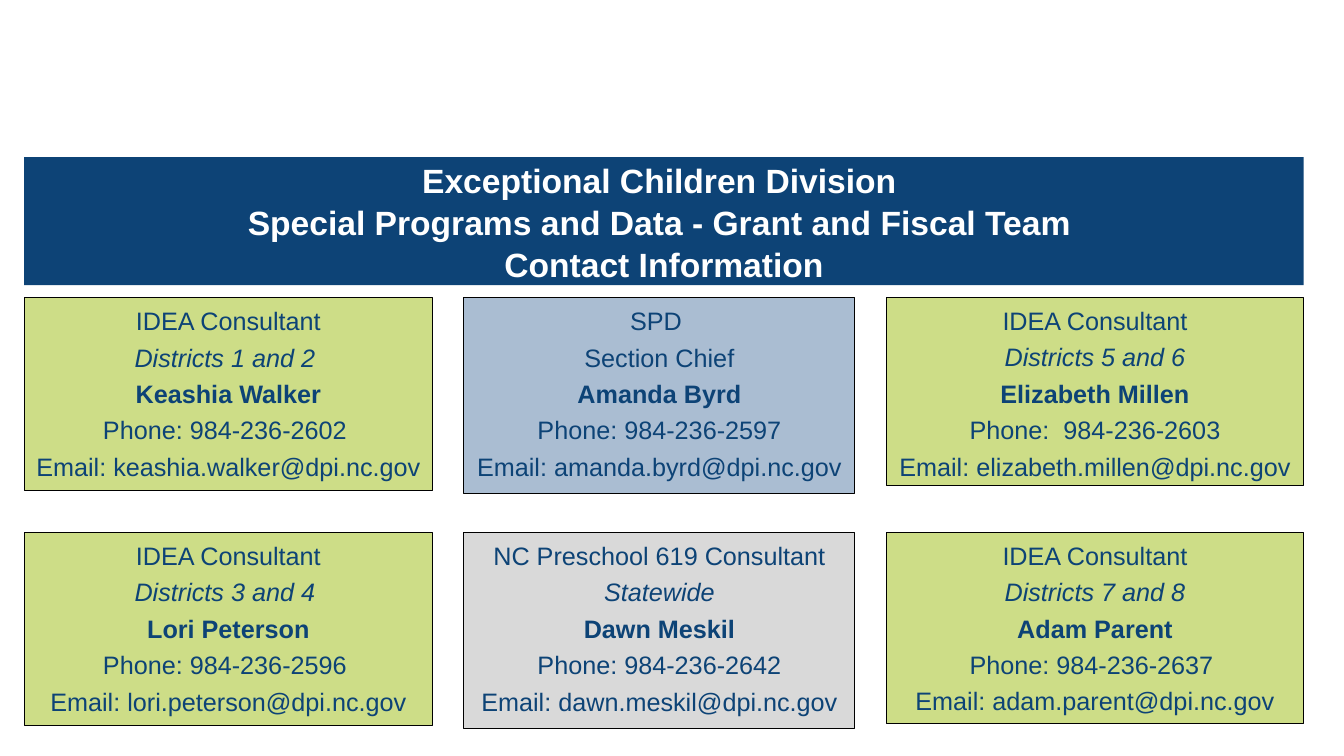
import pptx
import pptx.util
import pptx.dml.color
import pptx.enum.shapes
import pptx.enum.text
from dataclasses import dataclass

Inches, Pt = pptx.util.Inches, pptx.util.Pt
Anchor = pptx.enum.text.MSO_ANCHOR


@dataclass(frozen=True)
class Theme:
    font: str = "Arial"
    navy: str = "0D4376"
    white: str = "FFFFFF"
    black: str = "000000"
    green: str = "CDDD87"
    blue: str = "AABDD2"
    gray: str = "D9D9D9"
    head: int = 24
    body: int = 18
    gap: float = 4.4
    edge: float = 0.75


# Grid in inches: (left, width) of each column, top of each row
COLS = [(0.24, 4.05), (4.6, 3.88), (8.79, 4.14)]
ROWS = [2.95, 5.28]
BAND = (0.24, 1.56, 12.69, 1.27)


def color(code):
    return pptx.dml.color.RGBColor.from_string(code)


def write(para, text, *, face, size, ink, bold=False, italic=False,
          before=0, pitch=None):
    """Fill one centred paragraph; a vertical tab breaks the line."""
    para.text = text
    para.alignment = pptx.enum.text.PP_ALIGN.CENTER
    para.space_before = Pt(before)
    if pitch:
        para.line_spacing = pitch
    for run in para.runs:
        font = run.font
        font.name, font.size = face, Pt(size)
        font.bold, font.italic = bold, italic
        font.color.rgb = color(ink)


class Board:
    def __init__(self, slide, theme):
        self.slide, self.theme = slide, theme

    def box(self, area, fill, line=None, anchor=Anchor.TOP, inset=0.08):
        """Draw a rectangle and return its text frame."""
        shape = self.slide.shapes.add_shape(
            pptx.enum.shapes.MSO_SHAPE.RECTANGLE, *map(Inches, area))
        shape.shadow.inherit = False
        shape.fill.solid()
        shape.fill.fore_color.rgb = color(fill)
        if line:
            shape.line.color.rgb = color(line)
            shape.line.width = Pt(self.theme.edge)
        else:
            shape.line.fill.background()
        frame = shape.text_frame
        frame.word_wrap = True
        frame.vertical_anchor = anchor
        frame.margin_top = Inches(inset)
        return frame

    def title(self, text):
        look = self.theme
        frame = self.box(BAND, look.navy, anchor=Anchor.MIDDLE, inset=0.05)
        write(frame.paragraphs[0], text, face=look.font, size=look.head,
              ink=look.white, bold=True, pitch=1.05)

    def card(self, col, row, height, fill, role, area, name, phone, mail,
             slant=True):
        look = self.theme
        left, width = COLS[col]
        frame = self.box((left, ROWS[row], width, height), fill, look.black)
        lines = [role, area, name, f"Phone: {phone}",
                 f"Email: {mail}@dpi.nc.gov"]
        for i, text in enumerate(lines):
            para = frame.add_paragraph() if i else frame.paragraphs[0]
            write(para, text, face=look.font, size=look.body, ink=look.navy,
                  bold=i == 2, italic=slant and i == 1,
                  before=look.gap if i else 0)


def main():
    deck = pptx.Presentation()
    deck.slide_width, deck.slide_height = Inches(13.33), Inches(7.5)
    look = Theme()
    board = Board(deck.slides.add_slide(deck.slide_layouts[6]), look)

    board.title("Exceptional Children Division \v"
                "Special Programs and Data - Grant and Fiscal Team \v"
                "Contact Information")

    idea = "IDEA Consultant"
    board.card(0, 0, 1.92, look.green, idea, "Districts 1 and 2 ",
               "Keashia Walker", "984-236-2602 ", "keashia.walker")
    board.card(1, 0, 1.95, look.blue, "SPD ", "Section Chief",
               "Amanda Byrd", "984-236-2597", "amanda.byrd", slant=False)
    board.card(2, 0, 1.87, look.green, idea, "Districts 5 and 6",
               "Elizabeth Millen", " 984-236-2603", "elizabeth.millen")
    board.card(0, 1, 1.92, look.green, idea, "Districts 3 and 4 ",
               "Lori Peterson", "984-236-2596 ", "lori.peterson")
    board.card(1, 1, 1.95, look.gray, "NC Preschool 619 Consultant",
               "Statewide", "Dawn Meskil", "984-236-2642", "dawn.meskil")
    board.card(2, 1, 1.9, look.green, idea, "Districts 7 and 8",
               "Adam Parent", "984-236-2637 ", "adam.parent")
    deck.save("out.pptx")


if __name__ == "__main__":
    main()
